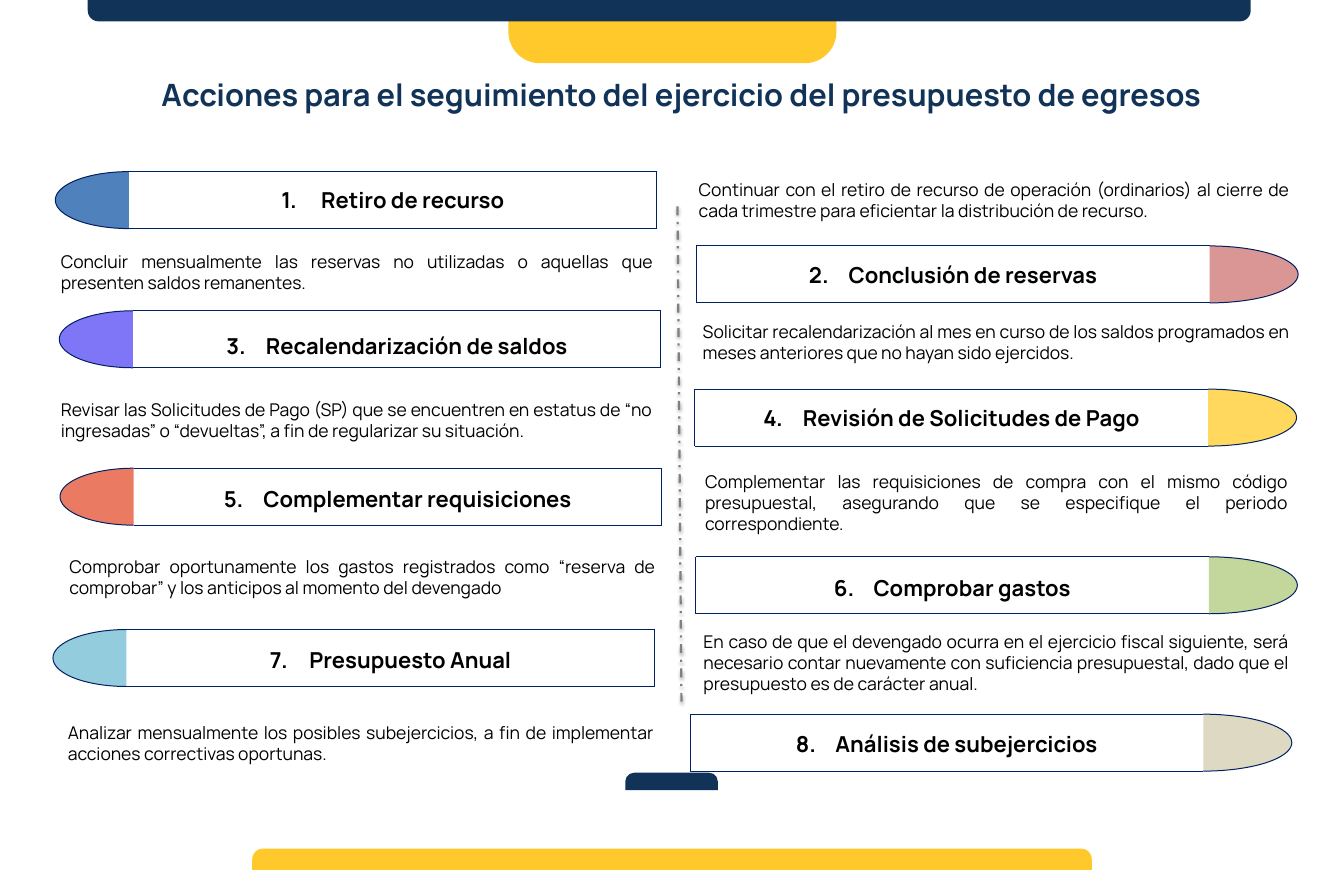
"""Build the slide on tracking the exercise of the budget."""
from math import cos, pi, sin
from lxml.etree import SubElement
from pptx import Presentation
from pptx.dml.color import RGBColor
from pptx.enum.dml import MSO_LINE
from pptx.enum.shapes import MSO_CONNECTOR, MSO_SHAPE
from pptx.enum.text import MSO_ANCHOR, MSO_AUTO_SIZE, PP_ALIGN
from pptx.oxml.ns import qn
from pptx.util import Inches, Pt

COLORS = {
    "navy": "123358", "gold": "FFC82B", "black": "000000", "gray": "808080",
    "edge": "002060", "blue": "4F81BD", "rose": "D99694", "violet": "7E75F7",
    "yellow": "FFD85D", "coral": "EB7A63", "green": "C3D69B",
    "aqua": "93CDDD", "sand": "DDD9C3",
}
FONT = "Manrope"
HIGH = 0.72

STEPS = [
    ("Retiro de recurso", "blue", 0.7, 2.17, 2.31),
    ("Conclusión de reservas", "rose", 8.81, 3.11, 3.26),
    ("Recalendarización de saldos", "violet", 0.75, 3.93, 4.15),
    ("Revisión de Solicitudes de Pago", "yellow", 8.79, 4.92, 5.06),
    ("Complementar requisiciones", "coral", 0.76, 5.92, 6.09),
    ("Comprobar gastos", "green", 8.8, 7.04, 7.22),
    ("Presupuesto Anual", "aqua", 0.67, 7.96, 8.12),
    ("Análisis de subejercicios", "sand", 8.73, 9.03, 9.19),
]
NOTES = [
    ("Continuar con el retiro de recurso de operación (ordinarios) al cierre de "
     "cada trimestre para eficientar la distribución de recurso.", 8.74, 2.21, 7.67, 0.61),
    ("Concluir mensualmente las reservas no utilizadas o aquellas que presenten "
     "saldos remanentes.", 0.67, 3.12, 7.69, 0.61),
    ("Solicitar recalendarización al mes en curso de los saldos programados en "
     "meses anteriores que no hayan sido ejercidos.", 8.79, 4.01, 7.62, 0.61),
    ("Revisar las Solicitudes de Pago (SP) que se encuentren en estatus de “no "
     "ingresadas” o “devueltas”, a fin de regularizar su situación.", 0.67, 4.99, 7.68, 0.61),
    ("Complementar las requisiciones de compra con el mismo código presupuestal, "
     "asegurando que se especifique el periodo correspondiente.", 8.82, 5.91, 7.57, 0.87),
    ("Comprobar oportunamente los gastos registrados como “reserva de comprobar” "
     "y los anticipos al momento del devengado", 0.78, 6.98, 7.61, 0.61),
    ("En caso de que el devengado ocurra en el ejercicio fiscal siguiente, será "
     "necesario contar nuevamente con suficiencia presupuestal, dado que el "
     "presupuesto es de carácter anual.", 8.8, 7.93, 7.6, 0.87),
    ("Analizar mensualmente los posibles subejercicios, a fin de implementar "
     "acciones correctivas oportunas.", 0.76, 9.08, 7.61, 0.61),
]


def tint(name):
    return RGBColor.from_string(COLORS[name])


class Page:
    def __init__(self, slide):
        self.shapes = slide.shapes

    def band(self, color, x, y, w, h, top, bottom):
        band = self.shapes.add_shape(MSO_SHAPE.ROUND_2_SAME_RECTANGLE,
                                     Inches(x), Inches(y), Inches(w), Inches(h))
        band.adjustments[0], band.adjustments[1] = top, bottom
        band.shadow.inherit = False
        band.fill.solid()
        band.fill.fore_color.rgb = tint(color)
        band.line.fill.background()

    def text(self, words, x, y, w, h, size, align, color="black", bold=False, number=None):
        box = self.shapes.add_textbox(Inches(x), Inches(y), Inches(w), Inches(h))
        frame = box.text_frame
        frame.word_wrap = True
        frame.auto_size = MSO_AUTO_SIZE.SHAPE_TO_FIT_TEXT
        para = frame.paragraphs[0]
        para.text = words
        para.alignment = align
        if number:
            props = para._p.get_or_add_pPr()
            props.set("marL", str(Inches(0.5)))
            props.set("indent", str(-Inches(0.5)))
            SubElement(props, qn("a:buAutoNum"), type="arabicPeriod", startAt=str(number))
        font = para.font
        font.name, font.size, font.bold = FONT, Pt(size), bold
        font.color.rgb = tint(color)
        return frame

    def title(self, words, x, y, w, h):
        frame = self.text(words, x, y, w, h, 28, PP_ALIGN.CENTER, "navy", True)
        frame.auto_size = MSO_AUTO_SIZE.NONE
        frame.vertical_anchor = MSO_ANCHOR.MIDDLE
        frame.margin_left = frame.margin_right = 0
        frame.margin_top = frame.margin_bottom = 0

    def step(self, number, words, color, x, y, top):
        if number % 2:
            cap, body, side = 0.93, 6.68, -1
            seam = x + cap
        else:
            cap, body, side = 1.12, 6.49, 1
            seam = x + body
        end, base = seam - side * body, y + HIGH
        turns = [pi * i / 48 for i in range(49)]
        arc = [(Inches(seam + side * cap * sin(t)),
                Inches(y + HIGH / 2 * (1 - cos(t)))) for t in turns]
        path = self.shapes.build_freeform(*arc[0])
        path.add_line_segments(arc[1:], close=False)
        for a, b in [((seam, y), (end, y)), ((end, base), (seam, base)),
                     ((end, y), (end, base))]:
            path.move_to(*map(Inches, a))
            path.add_line_segments([tuple(map(Inches, b))], close=False)
        bar = path.convert_to_shape()
        bar.shadow.inherit = False
        bar.fill.solid()
        bar.fill.fore_color.rgb = tint(color)
        bar.line.color.rgb = tint("edge")
        bar.line.width = Pt(0.91)
        self.text(words, min(seam, end), top, body, 0.42, 20, PP_ALIGN.CENTER,
                  bold=True, number=number)

    def divide(self, x1, y1, x2, y2):
        rule = self.shapes.add_connector(MSO_CONNECTOR.STRAIGHT, Inches(x1), Inches(y1),
                                         Inches(x2), Inches(y2))
        rule.line.color.rgb = tint("gray")
        rule.line.width = Pt(2)
        rule.line.dash_style = MSO_LINE.DASH_DOT
        effects = SubElement(rule._element.spPr, qn("a:effectLst"))
        shade = SubElement(effects, qn("a:outerShdw"), blurRad=str(Pt(3.1)),
                           dist=str(Pt(1.6)), dir="5400000", rotWithShape="0")
        ink = SubElement(shade, qn("a:srgbClr"), val=COLORS["black"])
        SubElement(ink, qn("a:alpha"), val="38000")


def main():
    deck = Presentation()
    deck.slide_width, deck.slide_height = Inches(17), Inches(11)
    page = Page(deck.slides.add_slide(deck.slide_layouts[6]))
    page.band("navy", 7.91, 9.77, 1.17, 0.22, 0.5, 0)
    page.band("gold", 6.43, 0, 4.15, 0.8, 0, 0.5)
    page.band("navy", 1.11, 0, 14.71, 0.27, 0, 0.5)
    page.band("gold", 3.19, 10.73, 10.62, 0.27, 0.5, 0)
    page.title("Acciones para el seguimiento del ejercicio del presupuesto de egresos",
               0.7, 0.89, 15.83, 0.6)
    page.divide(8.57, 2.61, 8.62, 8.9)
    for number, step in enumerate(STEPS, 1):
        page.step(number, *step)
    for words, x, y, w, h in NOTES:
        page.text(words, x, y, w, h, 16, PP_ALIGN.JUSTIFY)
    deck.save("out.pptx")


if __name__ == "__main__":
    main()
